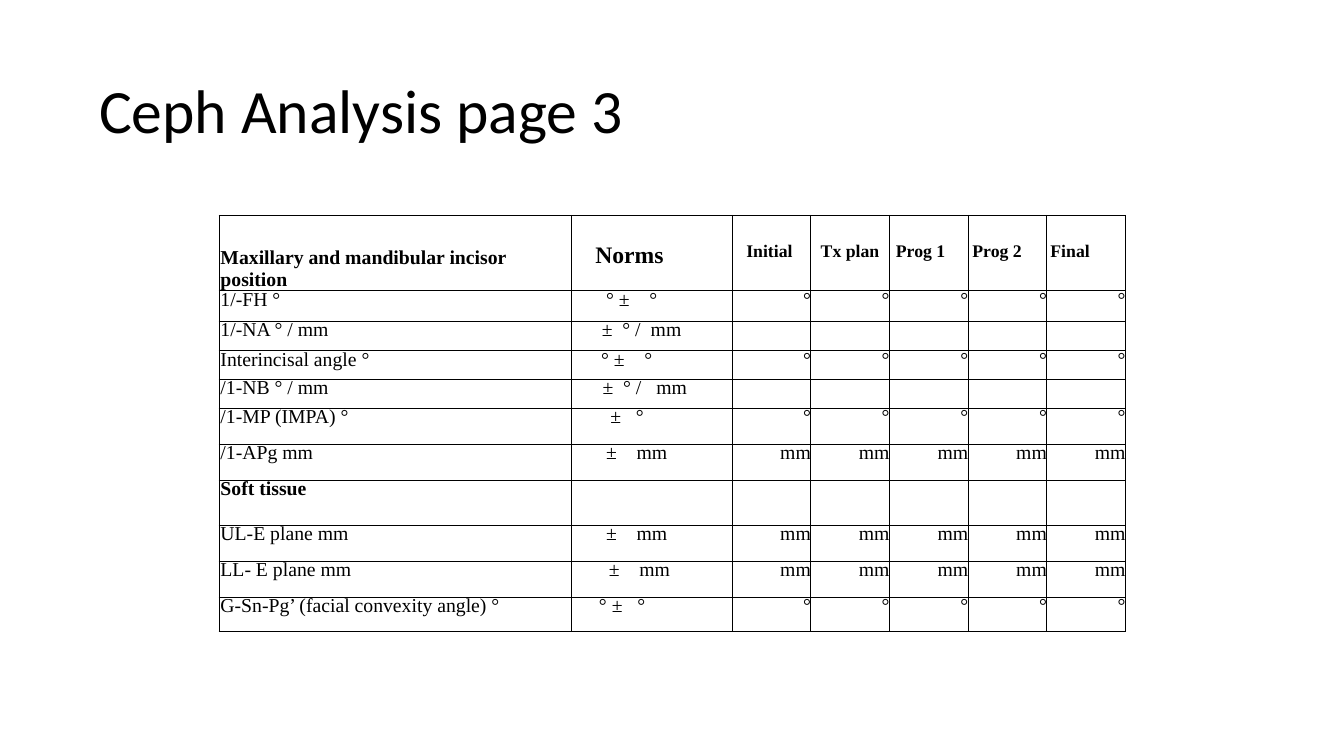
from dataclasses import dataclass

from lxml import etree
from pptx import Presentation
from pptx.dml.color import RGBColor
from pptx.enum import text
from pptx.oxml import ns
from pptx.util import Inches, Pt

BLACK = RGBColor(0x00, 0x00, 0x00)
SERIF = "Times New Roman"
COLUMN_WIDTHS = [4.97, 2.27] + [1.11] * 5
HEADING_HEIGHT = 1.06
HEADING_TOP = 0.61
ROW_TOP = 0.14
LABEL_INDENT = 0.02
LINE_PITCH = 10.1


@dataclass(frozen=True)
class Norm:
    wording: str
    indent: float
    tabs: tuple[float, ...]


@dataclass(frozen=True)
class Measure:
    label: str
    height: float
    norm: Norm | None = None
    unit: str = ""
    bold: bool = False


@dataclass(frozen=True)
class Heading:
    wording: str
    left: float
    width: float
    height: float = 0.71
    size: float = 18


MEASURES = [
    Measure("1/-FH °", 0.43, Norm("° ±\t°", 0.49, (0.61,)), "°"),
    Measure("1/-NA ° / mm", 0.42, Norm("±\t° /\tmm", 0.43, (0.29, 0.69))),
    Measure("Interincisal angle °", 0.4, Norm("° ±\t°", 0.42, (0.61,)), "°"),
    Measure("/1-NB ° / mm", 0.41, Norm("±\t° /\tmm", 0.44, (0.29, 0.76))),
    Measure("/1-MP (IMPA) °", 0.51, Norm("±\t°", 0.55, (0.36,)), "°"),
    Measure("/1-APg mm", 0.51, Norm("±\tmm", 0.49, (0.43,)), "mm"),
    Measure("Soft tissue", 0.63, bold=True),
    Measure("UL-E plane mm", 0.51, Norm("±\tmm", 0.49, (0.43,)), "mm"),
    Measure("LL- E plane mm", 0.51, Norm("±\tmm", 0.53, (0.43,)), "mm"),
    Measure("G-Sn-Pg’ (facial convexity angle) °", 0.49, Norm("° ±\t°", 0.39, (0.54,)), "°"),
]

HEADINGS = [
    Heading("Norms", 8.3, 1.56, 0.5, 24),
    Heading("Initial", 10.43, 1.05),
    Heading("Tx plan", 11.48, 1.07),
    Heading("Prog 1", 12.54, 1.08),
    Heading("Prog 2", 13.62, 1.1),
    Heading("Final", 14.72, 1.15),
]


def style_font(paragraph, name: str, size: float, bold: bool = False) -> None:
    font = paragraph.font
    font.name = name
    font.size = Pt(size)
    font.bold = bold
    font.color.rgb = BLACK


def add_label(slide, heading: Heading, top: float, name: str = SERIF, bold: bool = True):
    box = slide.shapes.add_textbox(
        Inches(heading.left), Inches(top), Inches(heading.width), Inches(heading.height)
    )
    box.text_frame.word_wrap = True
    paragraph = box.text_frame.paragraphs[0]
    paragraph.text = heading.wording
    style_font(paragraph, name, heading.size, bold)
    return box


def add_borders(cell) -> None:
    properties = cell._tc.get_or_add_tcPr()
    for side in ("lnL", "lnR", "lnT", "lnB"):
        line = etree.SubElement(properties, ns.qn(f"a:{side}"), w=str(Pt(1)))
        fill = etree.SubElement(line, ns.qn("a:solidFill"))
        etree.SubElement(fill, ns.qn("a:srgbClr"), val=str(BLACK))


def add_tabs(paragraph, tabs: tuple[float, ...]) -> None:
    stops = etree.SubElement(paragraph._p.get_or_add_pPr(), ns.qn("a:tabLst"))
    for position in tabs:
        etree.SubElement(stops, ns.qn("a:tab"), pos=str(Inches(position)), algn="l")


def prepare_cell(cell) -> None:
    add_borders(cell)
    cell.fill.background()
    cell.margin_left = cell.margin_right = cell.margin_top = cell.margin_bottom = 0
    paragraph = cell.text_frame.paragraphs[0]
    paragraph.line_spacing = Pt(LINE_PITCH)


def fill_cell(
    cell,
    wording: str,
    top: float = ROW_TOP,
    indent: float = 0,
    bold: bool = False,
    tabs: tuple[float, ...] = (),
    align: text.PP_ALIGN = text.PP_ALIGN.LEFT,
) -> None:
    cell.margin_top = Inches(top)
    cell.margin_left = Inches(indent)
    cell.text_frame.text = wording
    for index, paragraph in enumerate(cell.text_frame.paragraphs):
        paragraph.alignment = align
        paragraph.line_spacing = Pt(LINE_PITCH)
        paragraph.space_before = Pt(12 if index else 0)
        if tabs:
            add_tabs(paragraph, tabs)
        style_font(paragraph, SERIF, 20, bold)


def add_measure_table(slide) -> None:
    heights = [HEADING_HEIGHT] + [measure.height for measure in MEASURES]
    table = slide.shapes.add_table(
        len(heights), len(COLUMN_WIDTHS), Inches(3.09), Inches(3.04),
        Inches(sum(COLUMN_WIDTHS)), Inches(sum(heights)),
    ).table
    table.first_row = table.horz_banding = False
    for column, width in zip(table.columns, COLUMN_WIDTHS):
        column.width = Inches(width)
    for row, height in zip(table.rows, heights):
        row.height = Inches(height)
    for cell in table.iter_cells():
        prepare_cell(cell)

    fill_cell(
        table.cell(0, 0), "Maxillary and mandibular incisor\nposition",
        top=HEADING_TOP, indent=LABEL_INDENT, bold=True,
    )
    for row_index, measure in enumerate(MEASURES, start=1):
        fill_cell(table.cell(row_index, 0), measure.label, indent=LABEL_INDENT, bold=measure.bold)
        if measure.norm:
            norm = measure.norm
            fill_cell(table.cell(row_index, 1), norm.wording, indent=norm.indent, tabs=norm.tabs)
        if measure.unit:
            for column_index in range(2, len(COLUMN_WIDTHS)):
                fill_cell(
                    table.cell(row_index, column_index), measure.unit, align=text.PP_ALIGN.RIGHT
                )


def main() -> None:
    presentation = Presentation()
    presentation.slide_width = Inches(18.96)
    presentation.slide_height = Inches(10.67)
    slide = presentation.slides.add_slide(presentation.slide_layouts[6])

    title = Heading("Ceph Analysis page 3", 1.3, 16.36, 2.06, 62.6)
    title_box = add_label(slide, title, 0.57, "Calibri", bold=False)
    title_box.text_frame.vertical_anchor = text.MSO_ANCHOR.MIDDLE
    title_box.text_frame.paragraphs[0].line_spacing = 0.9

    add_measure_table(slide)
    for heading in HEADINGS:
        add_label(slide, heading, 3.34)
    presentation.save("out.pptx")


if __name__ == "__main__":
    main()
